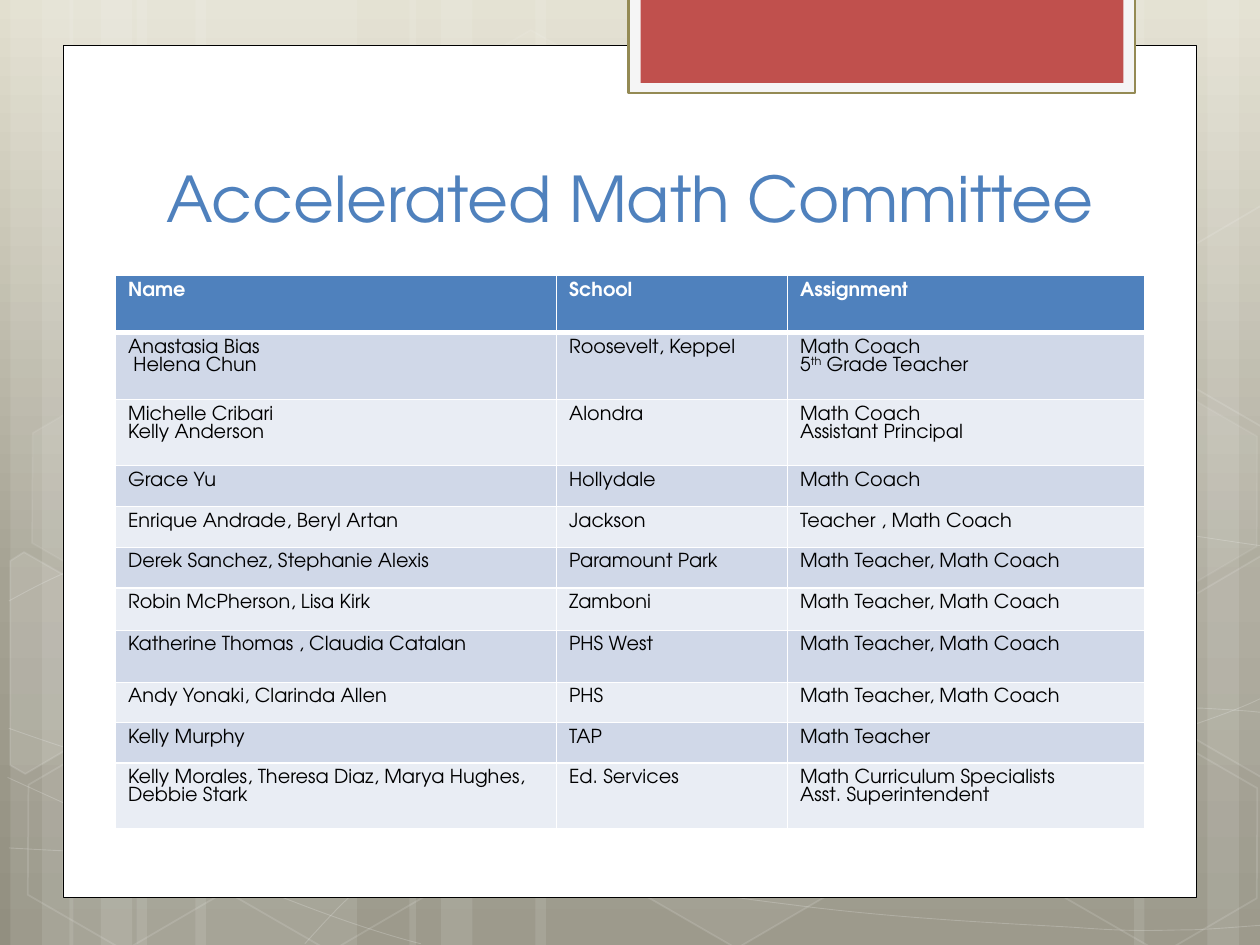
from dataclasses import dataclass
from math import cos, radians, sin
from typing import Optional

from lxml.etree import SubElement
from pptx import Presentation
from pptx.dml.color import RGBColor
from pptx.enum.shapes import MSO_SHAPE
from pptx.enum.text import MSO_ANCHOR, MSO_AUTO_SIZE, PP_ALIGN
from pptx.oxml import parse_xml
from pptx.oxml.ns import nsdecls, qn
from pptx.util import Emu, Inches, Pt

FONT = "TeX Gyre Adventor"
WHITE, BLACK, BLUE, RED = "FFFFFF", "000000", "4F81BD", "C0504D"
COLUMNS, ROWS = 120, 90  # grid of the slide
TILT = 30  # degrees, for all hexagons


@dataclass
class Box:
    """A rectangle or hexagon, in grid columns and rows; opacity in percent."""
    left: float
    top: float
    width: float
    height: float
    fill: Optional[str] = WHITE
    opacity: int = 100
    line: Optional[str] = None
    line_width: float = 1
    line_opacity: int = 100


@dataclass
class CutHexagon:
    """A hexagon cut by the slide's edge, in inches, turned about its center."""
    center: tuple
    points: list
    opacity: int = 0


def grid(cells: float) -> Emu:
    return Emu(round(cells * Inches(10) / COLUMNS))


def color(hex_value: str) -> RGBColor:
    return RGBColor.from_string(hex_value)


def paint(target, hex_value: Optional[str], opacity: int = 100) -> None:
    """Fill a shape or a line, with its transparency."""
    if hex_value is None or opacity == 0:
        target.background()
        return
    target.solid()
    target.fore_color.rgb = color(hex_value)
    if opacity < 100:
        rgb = next(target._xPr.iter(qn("a:srgbClr")))
        SubElement(rgb, qn("a:alpha")).set("val", str(opacity * 1000))


def style(shape, fill, opacity, line, line_width, line_opacity) -> None:
    shape.shadow.inherit = False
    paint(shape.fill, fill, opacity)
    paint(shape.line.fill, line, line_opacity)
    if line:
        shape.line.width = Pt(line_width)


def draw_box(slide, box: Box, preset=MSO_SHAPE.RECTANGLE):
    shape = slide.shapes.add_shape(
        preset, grid(box.left), grid(box.top), grid(box.width), grid(box.height))
    style(shape, box.fill, box.opacity, box.line, box.line_width, box.line_opacity)
    return shape


def draw_hexagon(slide, left: float, top: float, opacity: int, line_opacity: int) -> None:
    box = Box(left, top, 21, 18.2, WHITE, opacity, WHITE, 1, line_opacity)
    shape = draw_box(slide, box, MSO_SHAPE.HEXAGON)
    shape.adjustments[0], shape.adjustments[1] = 0.285, 1.1547
    shape.rotation = TILT


def draw_path(slide, points: list, closed: bool):
    """Build a freeform from points in inches."""
    start, *others = [(Inches(x), Inches(y)) for x, y in points]
    builder = slide.shapes.build_freeform(*start)
    builder.add_line_segments(others, close=closed)
    return builder.convert_to_shape()


def draw_curve(slide, start: tuple, *segments: tuple) -> None:
    """Segments of six numbers are cubic curves, those of two are lines."""
    points = [start] + [pair for part in segments for pair in zip(part[::2], part[1::2])]
    shape = draw_path(slide, points, False)
    lines = iter(list(shape._element.iter(qn("a:lnTo"))))
    for segment in segments:
        first = next(lines)
        if len(segment) == 6:
            first.tag = qn("a:cubicBezTo")
            for _ in range(2):
                control = next(lines)
                first.append(control[0])
                control.getparent().remove(control)
    style(shape, None, 0, WHITE, 0.5, 20)


def draw_cut_hexagon(slide, hexagon: CutHexagon) -> None:
    cosine, sine = cos(radians(TILT)), sin(radians(TILT))
    center_x, center_y = hexagon.center
    upright = [(center_x + (x - center_x) * cosine + (y - center_y) * sine,
                center_y - (x - center_x) * sine + (y - center_y) * cosine)
               for x, y in hexagon.points]
    shape = draw_path(slide, upright, True)
    shape.rotation = TILT
    style(shape, WHITE, hexagon.opacity, WHITE, 1, 12)


def write(paragraph, text: str, size: float, hex_value: str, bold: bool = False) -> None:
    """Write runs; text between carets is superscript."""
    for index, part in enumerate(text.split("^")):
        run = paragraph.add_run()
        run.text = part
        run.font.name, run.font.size, run.font.bold = FONT, Pt(size), bold
        run.font.color.rgb = color(hex_value)
        if index % 2:
            run.font._element.set("baseline", "30000")


def format_cell(cell, text: str, fill: str, is_header: bool) -> None:
    properties = cell._tc.get_or_add_tcPr()
    for side in "LRTB":
        width = Pt(3 if is_header and side == "B" else 1)
        properties.append(parse_xml(
            f'<a:ln{side} {nsdecls("a")} w="{width}"><a:solidFill>'
            f'<a:srgbClr val="{WHITE}"/></a:solidFill></a:ln{side}>'))
    cell.fill.solid()
    cell.fill.fore_color.rgb = color(fill)
    frame = cell.text_frame
    for index, line in enumerate(text.split("\n")):
        paragraph = frame.add_paragraph() if index else frame.paragraphs[0]
        paragraph.line_spacing = Pt(10.3)
        write(paragraph, line, 11, WHITE if is_header else BLACK, is_header)


# Background bands: left column and width
BANDS = [(13, 21), (1, 6), (4, 10), (18.6, 21), (6.6, 6), (9.6, 10),
         (88, 21), (115, 6), (108, 10), (51, 37), (39, 6), (42, 10)]
CURVES = [
    [(.07, 6.73), (.61, 6.76, 1.15, 6.79, 1.9, 6.78), (2.65, 6.77, 3.58, 6.75, 4.58, 6.65),
     (5.58, 6.55, 7, 6.36, 7.92, 6.17), (8.83, 5.98, 9.77, 5.68, 10.07, 5.51)],
    [(.07, 4.77), (.36, 4.61, .65, 4.46, 1.21, 4.31), (1.78, 4.16, 2.59, 3.94, 3.47, 3.87),
     (4.36, 3.8, 5.44, 3.79, 6.54, 3.87), (7.64, 3.95, 9.47, 4.26, 10.07, 4.34)],
    [(.06, 6.17), (1.27, 6.72, 2.47, 7.27, 3.34, 7.49)],
    [(.07, 5.78), (.38, 5.89, .7, 6, 1.28, 6.16), (1.86, 6.31, 2.73, 6.56, 3.57, 6.73),
     (4.4, 6.9, 5.45, 7.08, 6.28, 7.18), (7.11, 7.29, 8, 7.33, 8.53, 7.36),
     (9.05, 7.4, 9.19, 7.38, 9.45, 7.38), (9.71, 7.37, 9.89, 7.35, 10.07, 7.34)],
    [(2.42, 7.49), (2.6, 7.29, 2.78, 7.09, 3.02, 6.91), (3.26, 6.73, 3.6, 6.53, 3.88, 6.39),
     (4.16, 6.25, 4.33, 6.19, 4.7, 6.09), (5.06, 5.99, 5.73, 5.85, 6.08, 5.78),
     (6.44, 5.71, 6.49, 5.71, 6.8, 5.69), (7.11, 5.66, 7.6, 5.63, 7.94, 5.62),
     (8.29, 5.61, 8.86, 5.62, 8.86, 5.62), (9.53, 5.62),
     (9.71, 5.63, 9.88, 5.64, 9.97, 5.65), (10.06, 5.66, 10.03, 5.65, 10.06, 5.66)],
]
HEXAGONS = [(40.1, 4.3, 4, 8), (59.6, 70.7, 6, 12), (1.3, 70.9, 0, 12),
            (1.7, 37.4, 7, 8), (20.9, 71, 0, 12), (90.4, 54.4, 10, 12),
            (100.1, 71.2, 0, 12), (100.1, 37.7, 7, 8)]
CUT_HEXAGONS = [
    CutHexagon((.36, 5.35), [(.08, 4.45), (.19, 4.38), (.96, 4.82), (.95, 5.7), (.2, 6.14),
                             (.08, 6.07)], 10),
    CutHexagon((9.85, 5.2), [(9.26, 4.85), (10.01, 4.41), (10.09, 4.46), (10.09, 6.13),
                             (10.02, 6.17), (9.26, 5.73)], 4),
    CutHexagon((9.85, 2.41), [(9.26, 2.07), (10.01, 1.63), (10.1, 1.68), (10.09, 3.35),
                              (10.02, 3.39), (9.26, 2.95)]),
]
PANELS = [Box(6, 4.3, 108, 81.2, WHITE, line=BLACK, line_width=0.5),
          Box(59.85, -0.2, 48.25, 9.1, "F5F5F5", line="948A54", line_width=1.25),
          Box(61, -0.2, 46, 8.1, RED)]
COACHES = "Math Teacher, Math Coach"
MEMBERS = [  # row height in grid rows, then the cells
    (5.45, "Name", "School", "Assignment"),
    (6.35, "Anastasia Bias\n Helena Chun", "Roosevelt, Keppel",
     "Math Coach\n5^th^ Grade Teacher"),
    (6.3, "Michelle Cribari\nKelly Anderson", "Alondra", "Math Coach\nAssistant Principal"),
    (3.9, "Grace Yu", "Hollydale", "Math Coach"),
    (3.9, "Enrique Andrade, Beryl Artan", "Jackson", "Teacher , Math Coach"),
    (3.85, "Derek Sanchez, Stephanie Alexis", "Paramount Park", COACHES),
    (4.05, "Robin McPherson, Lisa Kirk", "Zamboni", COACHES),
    (4.95, "Katherine Thomas , Claudia Catalan", "PHS West", COACHES),
    (3.85, "Andy Yonaki, Clarinda Allen", "PHS", COACHES),
    (3.85, "Kelly Murphy", "TAP", "Math Teacher"),
    (6.25, "Kelly Morales, Theresa Diaz, Marya Hughes, Debbie Stark", "Ed. Services",
     "Math Curriculum Specialists\nAsst. Superintendent"),
]

presentation = Presentation()
presentation.slide_width, presentation.slide_height = grid(COLUMNS), grid(ROWS)
slide = presentation.slides.add_slide(presentation.slide_layouts[5])

# Background gradient
slide.background.fill.gradient()
gradient = next(slide.background._cSld.iter(qn("a:gradFill")))
stops = gradient.find(qn("a:gsLst"))
stops.clear()
for position, shade in [(0, "E2DFCF"), (62, "A5A293"), (100, "928F80")]:
    stop = SubElement(stops, qn("a:gs"), pos=str(position * 1000))
    SubElement(stop, qn("a:srgbClr"), val=shade)
gradient.find(qn("a:lin")).set("ang", str(90 * 60000))

# Background decoration and panels
for left, width in BANDS:
    draw_box(slide, Box(left, 0, width, ROWS, WHITE, 10))
for curve in CURVES:
    draw_curve(slide, *curve)
for hexagon in HEXAGONS:
    draw_hexagon(slide, *hexagon)
for cut_hexagon in CUT_HEXAGONS:
    draw_cut_hexagon(slide, cut_hexagon)
for panel in PANELS:
    draw_box(slide, panel)

# Title, brought in front of the panels
title = slide.shapes.title
slide.shapes._spTree.append(title._element)
title.left, title.top, title.width, title.height = map(grid, (13.9, 12, 92.2, 11))
title.text_frame.auto_size = MSO_AUTO_SIZE.NONE
title.text_frame.vertical_anchor = MSO_ANCHOR.BOTTOM
title.text_frame.paragraphs[0].alignment = PP_ALIGN.CENTER
write(title.text_frame.paragraphs[0], "Accelerated Math Committee", 36, BLUE)

# Committee table
table = slide.shapes.add_table(len(MEMBERS), 3, grid(11), grid(26.25), grid(98),
                               grid(sum(member[0] for member in MEMBERS))).table
for column, width in zip(table.columns, (42, 22, 34)):
    column.width = grid(width)
for row_index, (height, *texts) in enumerate(MEMBERS):
    table.rows[row_index].height = grid(height)
    fill = BLUE if row_index == 0 else ("E9EDF4", "D0D8E8")[row_index % 2]
    for column_index, text in enumerate(texts):
        format_cell(table.cell(row_index, column_index), text, fill, row_index == 0)

presentation.save("out.pptx")
